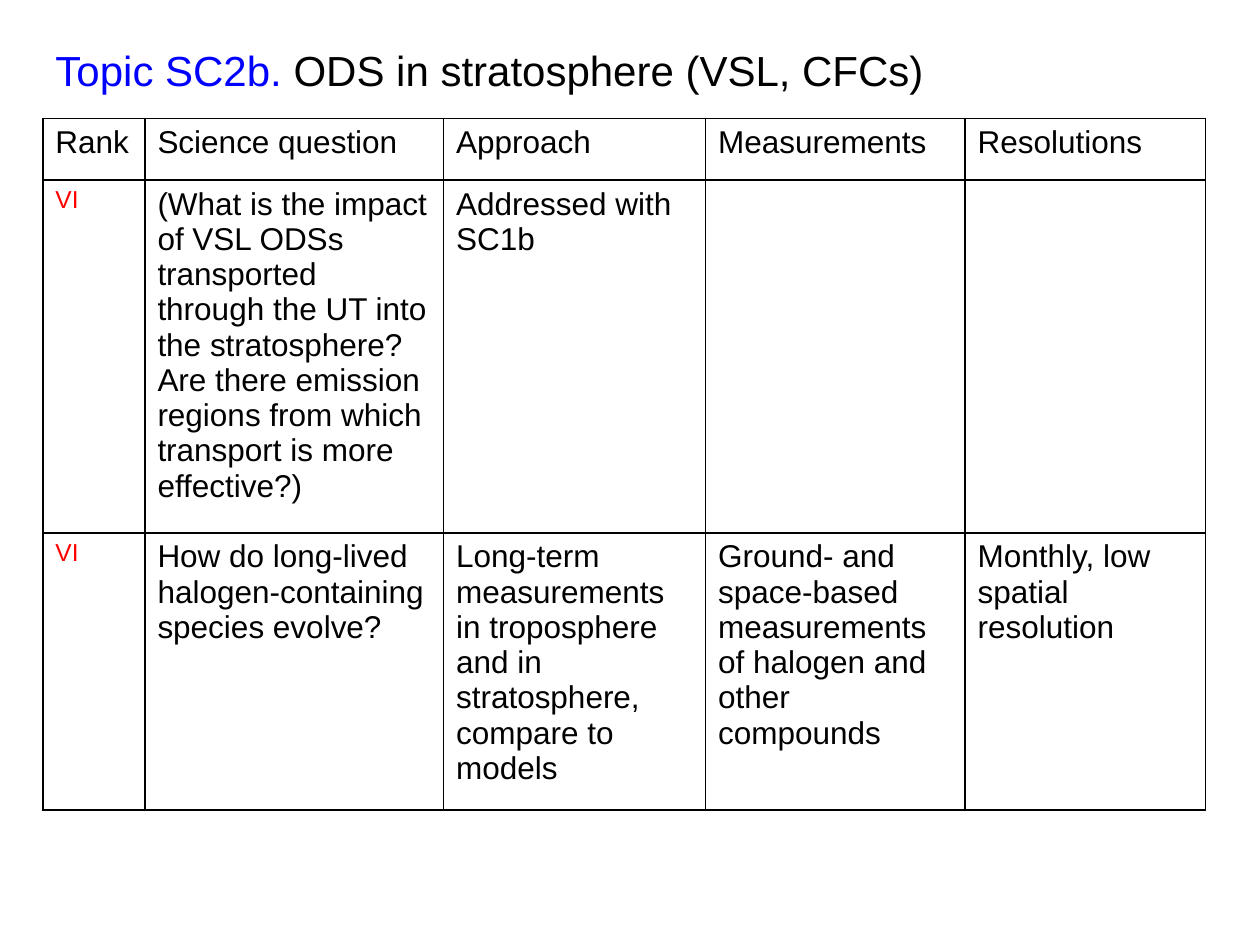
from lxml import etree
from pptx import Presentation
from pptx.dml.color import RGBColor
from pptx.enum.text import MSO_ANCHOR, PP_ALIGN
from pptx.oxml.ns import qn
from pptx.util import Inches, Pt

LEFT, TOP = PP_ALIGN.LEFT, MSO_ANCHOR.TOP
THEME = {
    "font": "Arial",
    "ink": "000000", "topic": "0000FF", "rank": "FF0000", "paper": "FFFFFF",
    "title": 24, "body": 18, "small": 14, "rule": 1,
}
COLS = [0.81, 2.37, 2.08, 2.06, 1.91]
ROWS = [0.49, 2.8, 2.2]
EDGE = 0.34
CELLS = [
    ["Rank", "Science question", "Approach", "Measurements", "Resolutions"],
    ["VI",
     "(What is the impact of VSL ODSs transported through the UT into "
     "the stratosphere? Are there emission regions from which transport "
     "is more effective?)",
     "Addressed with SC1b", "", ""],
    ["VI",
     "How do long-lived halogen-containing species evolve?",
     "Long-term measurements in troposphere and in stratosphere, "
     "compare to models",
     "Ground- and space-based measurements of halogen and other compounds",
     "Monthly, low spatial resolution"],
]


def add_run(para, text, size, color):
    run = para.add_run()
    run.text = text
    run.font.name = THEME["font"]
    run.font.size = Pt(THEME[size])
    run.font.color.rgb = RGBColor.from_string(THEME[color])


def rule_cell(cell):
    """Draw a line on all four sides; the lines must precede the fill."""
    props = cell._tc.get_or_add_tcPr()
    for spot, side in enumerate(("lnL", "lnR", "lnT", "lnB")):
        line = etree.Element(qn(f"a:{side}"), w=str(Pt(THEME["rule"])))
        fill = etree.SubElement(line, qn("a:solidFill"))
        etree.SubElement(fill, qn("a:srgbClr"), val=THEME["ink"])
        props.insert(spot, line)


prs = Presentation()
prs.slide_width, prs.slide_height = Inches(10), Inches(7.5)
slide = prs.slides.add_slide(prs.slide_layouts[5])

# Title
title = slide.shapes.title
title.left, title.top = Inches(EDGE), Inches(0.3)
title.width, title.height = Inches(7.39), Inches(0.5)
frame = title.text_frame
frame.word_wrap = False
frame.vertical_anchor = TOP
para = frame.paragraphs[0]
para.alignment = LEFT
add_run(para, "Topic SC2b.", "title", "topic")
add_run(para, " ODS in stratosphere (VSL, CFCs)", "title", "ink")

# Table of science questions
table = slide.shapes.add_table(
    len(ROWS), len(COLS), Inches(EDGE), Inches(0.94),
    Inches(sum(COLS)), Inches(sum(ROWS))).table
table.first_row = table.horz_banding = False
for col, width in zip(table.columns, COLS):
    col.width = Inches(width)
for row, height in zip(table.rows, ROWS):
    row.height = Inches(height)

for r, texts in enumerate(CELLS):
    for c, text in enumerate(texts):
        cell = table.cell(r, c)
        cell.fill.solid()
        cell.fill.fore_color.rgb = RGBColor.from_string(THEME["paper"])
        rule_cell(cell)
        rank = r > 0 and c == 0
        if text:
            add_run(cell.text_frame.paragraphs[0], text,
                    "small" if rank else "body", "rank" if rank else "ink")

prs.save("out.pptx")
